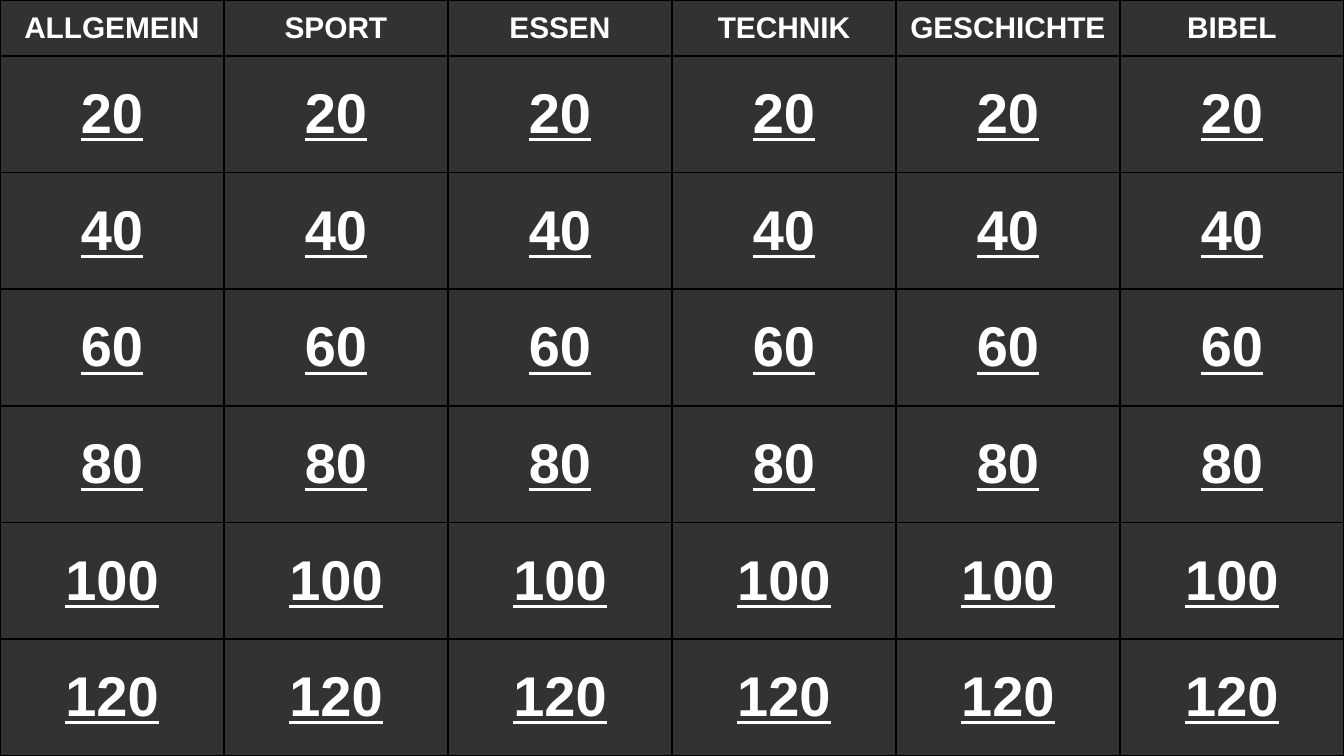
from lxml import etree
from pptx import Presentation
from pptx.dml.color import RGBColor
from pptx.enum.text import MSO_ANCHOR, PP_ALIGN
from pptx.oxml.ns import qn
from pptx.util import Inches, Pt

CENTER = PP_ALIGN.CENTER
MIDDLE = MSO_ANCHOR.MIDDLE

SLIDE_W, SLIDE_H = 1344, 756
SCALE = Inches(10) / SLIDE_W
HEADER_H = 56
COLORS = {"board": "323232", "grid": "000000", "text": "FFFFFF"}
CATEGORIES = ["ALLGEMEIN", "SPORT", "ESSEN", "TECHNIK", "GESCHICHTE", "BIBEL"]
POINTS = range(20, 121, 20)

BANDING = {"first_row": False, "horz_banding": False}
CELL = {
    "vertical_anchor": MIDDLE,
    "margin_left": Inches(0.04),
    "margin_right": Inches(0.04),
    "margin_top": 0,
    "margin_bottom": 0,
}
CATEGORY_FONT = {"name": "Arial", "size": Pt(16), "bold": True}
POINTS_FONT = {"name": "Arial", "size": Pt(30), "bold": True, "underline": True}


def px(length):
    return round(length * SCALE)


def rgb(name):
    return RGBColor.from_string(COLORS[name])


def apply_format(target, values):
    for attribute, value in values.items():
        setattr(target, attribute, value)


def add_borders(cell):
    """Draw all four cell edges; they must come before the fill in tcPr."""
    properties = cell._tc.get_or_add_tcPr()
    for position, edge in enumerate(("lnL", "lnR", "lnT", "lnB")):
        line = etree.Element(qn(f"a:{edge}"), w=str(Pt(1)))
        fill = etree.SubElement(line, qn("a:solidFill"))
        etree.SubElement(fill, qn("a:srgbClr"), val=COLORS["grid"])
        properties.insert(position, line)


def fill_cell(cell, label, font):
    apply_format(cell, CELL)
    cell.fill.background()
    add_borders(cell)
    paragraph = cell.text_frame.paragraphs[0]
    paragraph.alignment = CENTER
    run = paragraph.add_run()
    run.text = label
    apply_format(run.font, font)
    run.font.color.rgb = rgb("text")


def add_quiz_board(slide, left, top, width, height):
    """Place a header row of categories above one row for each point value."""
    board = slide.shapes.add_table(
        len(POINTS) + 1, len(CATEGORIES), px(left), px(top), px(width), px(height)
    ).table
    apply_format(board, BANDING)
    for column in board.columns:
        column.width = px(width / len(CATEGORIES))
    for row in board.rows:
        row.height = px((height - HEADER_H) / len(POINTS))
    board.rows[0].height = px(HEADER_H)

    for column, category in enumerate(CATEGORIES):
        fill_cell(board.cell(0, column), category, CATEGORY_FONT)
        for row, value in enumerate(POINTS, start=1):
            fill_cell(board.cell(row, column), str(value), POINTS_FONT)


def main():
    deck = Presentation()
    deck.slide_width, deck.slide_height = px(SLIDE_W), px(SLIDE_H)
    slide = deck.slides.add_slide(deck.slide_layouts[6])
    background = slide.background.fill
    background.solid()
    background.fore_color.rgb = rgb("board")
    add_quiz_board(slide, 0, 0, SLIDE_W, SLIDE_H)
    deck.save("out.pptx")


if __name__ == "__main__":
    main()
